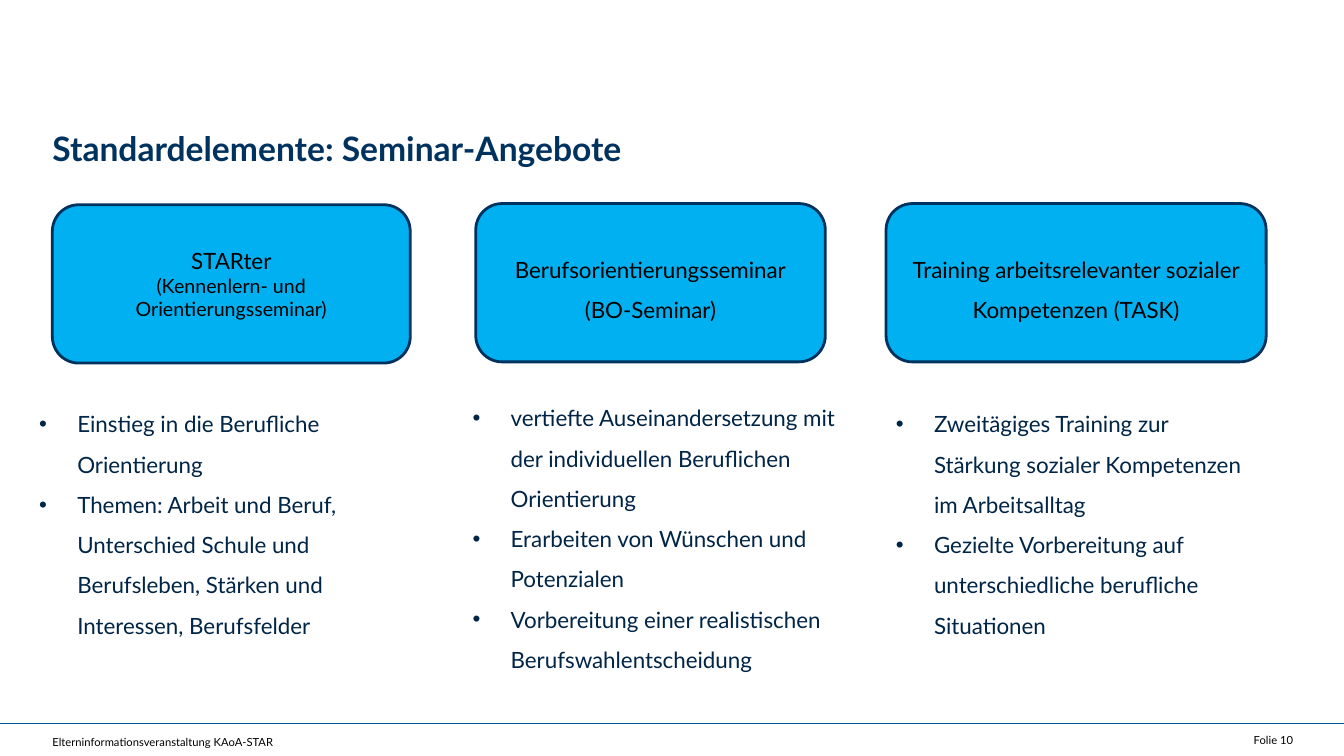
from pptx import Presentation
from pptx.dml.color import RGBColor
from pptx.enum.shapes import MSO_CONNECTOR as Connector
from pptx.enum.shapes import MSO_SHAPE as Shape
from pptx.enum.text import MSO_ANCHOR as Anchor
from pptx.enum.text import MSO_AUTO_SIZE as AutoSize
from pptx.enum.text import PP_ALIGN as Align
from pptx.oxml.ns import qn
from pptx.util import Cm, Pt
from lxml.etree import SubElement

FONT = "Lato"
NAVY, DARK_NAVY, BLUE, SKY, BLACK = "00325F", "002547", "00579D", "00B0F0", "000000"
SLIDE_WIDTH, SLIDE_HEIGHT = 33.87, 19.05
MARGIN = 1.32
FOOTER_TOP = 18.24
CARD_HEIGHT = 3.99
BULLET_INDENT = 0.96

SEMINARS = [
    {
        "card": (MARGIN, 5.16, 9.02),
        "heading": [("STARter", 16), ("(Kennenlern- und Orientierungsseminar)", 14)],
        "heading_spacing": 1.0,
        "details": (0.74, 9.88, 9.3, 6.32),
        "points": [
            "Einstieg in die Berufliche Orientierung",
            "Themen: Arbeit und Beruf, Unterschied Schule und Berufsleben, "
            "Stärken und Interessen, Berufsfelder",
        ],
    },
    {
        "card": (11.99, 5.13, 8.81),
        "heading": [("Berufsorientierungsseminar", 16), ("(BO-Seminar)", 16)],
        "heading_spacing": 1.5,
        "details": (11.66, 9.73, 9.8, 7.34),
        "points": [
            "vertiefte Auseinandersetzung mit der individuellen Beruflichen Orientierung",
            "Erarbeiten von Wünschen und Potenzialen",
            "Vorbereitung einer realistischen Berufswahlentscheidung",
        ],
    },
    {
        "card": (22.33, 5.13, 9.58),
        "heading": [("Training arbeitsrelevanter sozialer Kompetenzen (TASK)", 16)],
        "heading_spacing": 1.5,
        "details": (22.33, 9.88, 9.63, 6.32),
        "points": [
            "Zweitägiges Training zur Stärkung sozialer Kompetenzen im Arbeitsalltag",
            "Gezielte Vorbereitung auf unterschiedliche berufliche Situationen",
        ],
    },
]


def rgb(value):
    return RGBColor.from_string(value)


def set_insets(frame, inset):
    frame.margin_left = frame.margin_right = Cm(inset)
    frame.margin_top = frame.margin_bottom = Cm(inset)


def add_bullet(paragraph):
    properties = paragraph._p.get_or_add_pPr()
    properties.set("marL", str(Cm(BULLET_INDENT)))
    properties.set("indent", str(-Cm(BULLET_INDENT)))
    SubElement(properties, qn("a:buFont")).set("typeface", "Arial")
    SubElement(properties, qn("a:buChar")).set("char", "•")


def write(frame, lines, color, spacing=1.0, align=Align.LEFT, bold=False, bullets=False):
    for index, (text, size) in enumerate(lines):
        paragraph = frame.add_paragraph() if index else frame.paragraphs[0]
        if bullets:
            add_bullet(paragraph)
        paragraph.alignment = align
        paragraph.line_spacing = spacing
        run = paragraph.add_run()
        run.text = text
        run.font.name = FONT
        run.font.size = Pt(size)
        run.font.bold = bold
        run.font.color.rgb = rgb(color)


def add_label(slide, box, text, size, color, anchor=Anchor.TOP, **style):
    frame = slide.shapes.add_textbox(*map(Cm, box)).text_frame
    frame.word_wrap = True
    frame.vertical_anchor = anchor
    set_insets(frame, 0)
    write(frame, [(text, size)], color, **style)


def add_card(slide, place, heading, spacing):
    left, top, width = place
    card = slide.shapes.add_shape(
        Shape.ROUNDED_RECTANGLE, Cm(left), Cm(top), Cm(width), Cm(CARD_HEIGHT))
    card.shadow.inherit = False
    card.fill.solid()
    card.fill.fore_color.rgb = rgb(SKY)
    card.line.color.rgb = rgb(NAVY)
    card.line.width = Pt(2)
    frame = card.text_frame
    frame.word_wrap = True
    frame.vertical_anchor = Anchor.MIDDLE
    set_insets(frame, 0.1)
    write(frame, heading, BLACK, spacing, Align.CENTER)


def add_details(slide, box, points):
    frame = slide.shapes.add_textbox(*map(Cm, box)).text_frame
    frame.word_wrap = True
    frame.auto_size = AutoSize.SHAPE_TO_FIT_TEXT
    write(frame, [(point, 16) for point in points], DARK_NAVY, 1.5, bullets=True)


def add_footer(slide):
    rule = slide.shapes.add_connector(
        Connector.STRAIGHT, 0, Cm(FOOTER_TOP), Cm(SLIDE_WIDTH), Cm(FOOTER_TOP))
    rule.line.color.rgb = rgb(BLUE)
    rule.line.width = Pt(0.57)
    SubElement(rule._element.spPr, qn("a:effectLst"))
    height = SLIDE_HEIGHT - FOOTER_TOP
    add_label(slide, (MARGIN, FOOTER_TOP, 20.65, height),
              "Elterninformationsveranstaltung KAoA-STAR", 8, BLACK,
              Anchor.MIDDLE, spacing=Pt(12))
    add_label(slide, (24.16, FOOTER_TOP, 8.43, height),
              "Folie 10", 8, BLACK, Anchor.MIDDLE, align=Align.RIGHT)


def main():
    presentation = Presentation()
    presentation.slide_width = Cm(SLIDE_WIDTH)
    presentation.slide_height = Cm(SLIDE_HEIGHT)
    slide = presentation.slides.add_slide(presentation.slide_layouts[6])
    add_label(slide, (MARGIN, 2.72, 31.27, 1.19),
              "Standardelemente: Seminar-Angebote", 24, NAVY, spacing=1.5, bold=True)
    for seminar in SEMINARS:
        add_card(slide, seminar["card"], seminar["heading"], seminar["heading_spacing"])
        add_details(slide, seminar["details"], seminar["points"])
    add_footer(slide)
    presentation.save("out.pptx")


if __name__ == "__main__":
    main()
